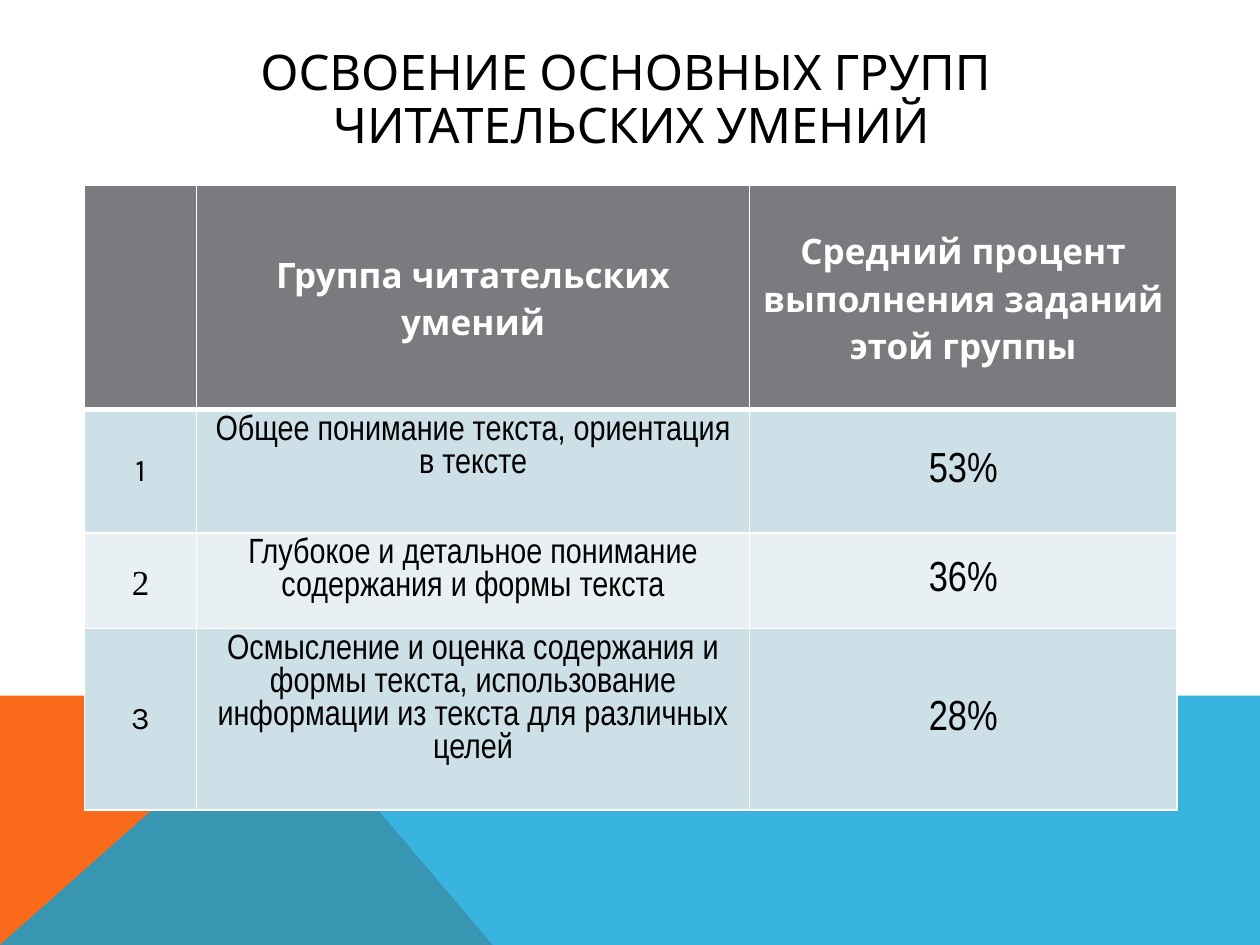
from lxml.etree import SubElement
from pptx import Presentation
from pptx.dml.color import RGBColor
from pptx.enum.text import MSO_ANCHOR as ANCHOR, PP_ALIGN as ALIGN
from pptx.oxml.ns import qn
from pptx.util import Inches, Pt

WHITE, BLACK, GRAY = "FFFFFF", "000000", "797B7E"
BANDS = ["CDE0E8", "E8F0F4"]
SANS, NARROW, SERIF = "Karla", "Arial Narrow", "Times New Roman"


def paint(fill, color):
    fill.solid()
    fill.fore_color.rgb = RGBColor.from_string(color)


def style(p, size, font, color, bold=False, spacing=None):
    p.alignment = ALIGN.CENTER
    p.line_spacing = spacing
    p.font.size, p.font.name, p.font.bold = Pt(size), font, bold
    p.font.color.rgb = RGBColor.from_string(color)


prs = Presentation()
prs.slide_width, prs.slide_height = Inches(10), Inches(7.5)
s = prs.slides.add_slide(prs.slide_layouts[6])

# Bottom band: an orange wedge under a translucent blue one
top, bottom, bend = 5.52, 7.5, 2.23
wedges = [
    ("F96A1B", 100, [(0, bottom), (0, top), (bend, top), (3.91, bottom)]),
    ("08A1D9", 80, [(0, bottom), (bend, top), (10, top), (10, bottom)]),
]
for color, opacity, points in wedges:
    start, *rest = [(Inches(x), Inches(y)) for x, y in points]
    builder = s.shapes.build_freeform(*start)
    builder.add_line_segments(rest, close=True)
    sp = builder.convert_to_shape()
    sp.shadow.inherit = False
    sp.line.fill.background()
    paint(sp.fill, color)
    if opacity < 100:
        rgb = sp.fill._xPr.find(".//" + qn("a:srgbClr"))
        SubElement(rgb, qn("a:alpha"), val=str(opacity * 1000))

# Title
tf = s.shapes.add_textbox(Inches(0.9), Inches(0.4), Inches(8.22), Inches(0.8)).text_frame
tf.word_wrap = True
tf.vertical_anchor = ANCHOR.MIDDLE
p = tf.paragraphs[0]
p.text = "ОСВОЕНИЕ ОСНОВНЫХ ГРУПП \vЧИТАТЕЛЬСКИХ УМЕНИЙ"
style(p, 28, SANS, BLACK, spacing=0.9)

# Table
rows = [
    ("", "Группа читательских умений", "Средний процент выполнения заданий этой группы"),
    ("1", "Общее понимание текста, ориентация в тексте", "53%"),
    ("2", "Глубокое и детальное понимание содержания и формы текста", "36%"),
    ("3", "Осмысление и оценка содержания и формы текста, "
          "использование информации из текста для различных целей", "28%"),
]
number_fonts = {1: (18, SANS), 2: (20, SERIF), 3: (18, SANS)}
widths, heights = [0.89, 4.39, 3.39], [1.78, 0.98, 0.76, 1.44]
table = s.shapes.add_table(len(rows), len(widths), Inches(0.67), Inches(1.47),
                           Inches(sum(widths)), Inches(sum(heights))).table
for column, width in zip(table.columns, widths):
    column.width = Inches(width)
for row, height in zip(table.rows, heights):
    row.height = Inches(height)

for i, texts in enumerate(rows):
    for j, text in enumerate(texts):
        cell = table.cell(i, j)
        header, number = i == 0, j == 0

        tcPr = cell._tc.get_or_add_tcPr()
        for side in "LRTB":
            thick = (i, side) in [(0, "B"), (1, "T")]
            ln = SubElement(tcPr, qn("a:ln" + side), w=str(Pt(3 if thick else 1)))
            SubElement(SubElement(ln, qn("a:solidFill")), qn("a:srgbClr"), val=WHITE)
        paint(cell.fill, GRAY if header else BANDS[(i - 1) % 2])

        cell.margin_left = cell.margin_right = Inches(0.07)
        cell.margin_top = cell.margin_bottom = Inches(0 if header or number else 0.04)
        cell.vertical_anchor = ANCHOR.TOP if j == 1 and not header else ANCHOR.MIDDLE
        cell.text = text
        p = cell.text_frame.paragraphs[0]
        if header:
            style(p, 20, SANS, WHITE, bold=True, spacing=1.15)
        elif number:
            size, font = number_fonts[i]
            style(p, size, font, BLACK, spacing=1.15 if font == SERIF else None)
        else:
            style(p, 20 if j == 1 else 24, NARROW, BLACK)

prs.save("out.pptx")
